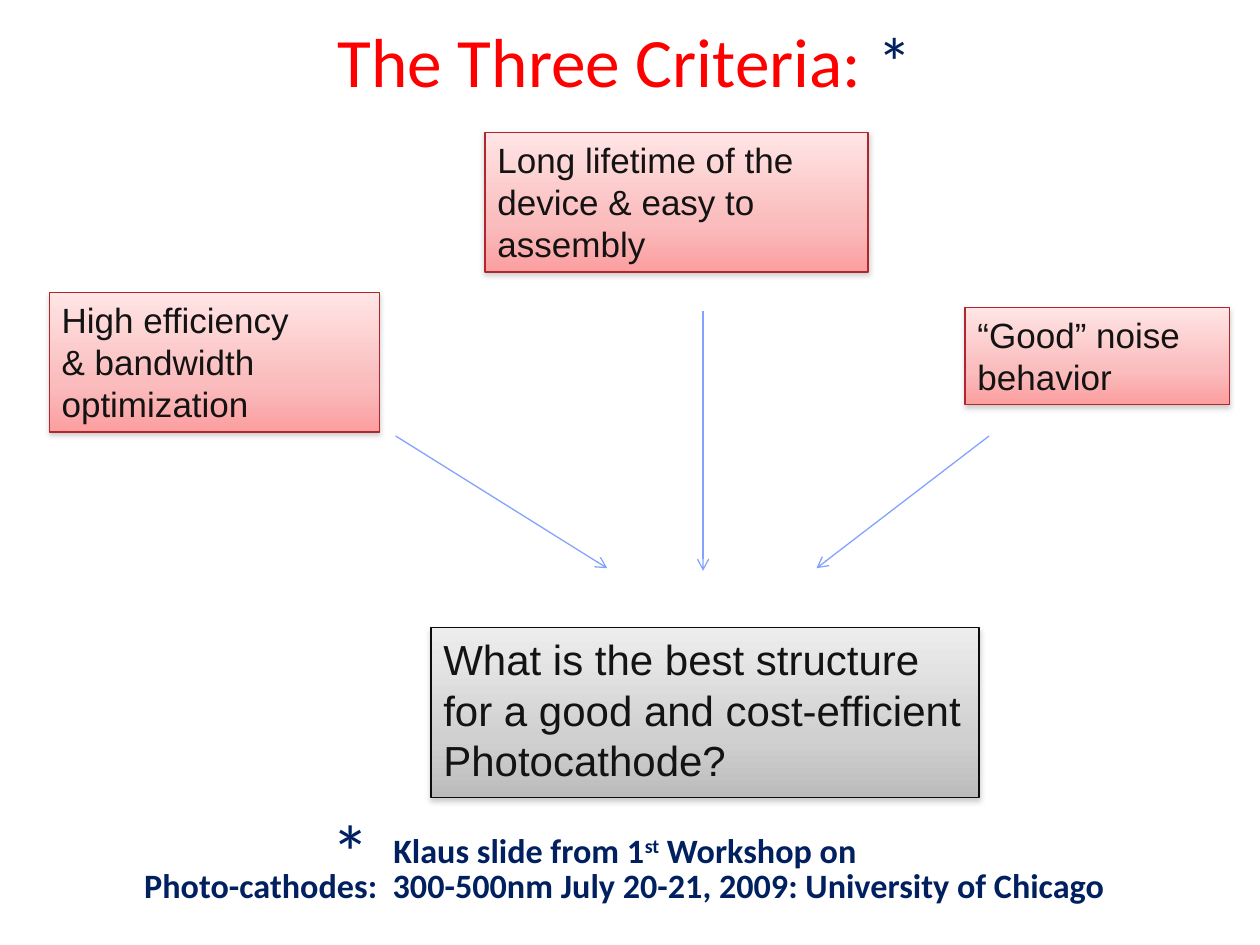
from typing import NamedTuple

from lxml import etree
from pptx import Presentation
from pptx.dml.color import RGBColor
from pptx.enum.shapes import MSO_CONNECTOR, MSO_SHAPE
from pptx.enum.text import MSO_ANCHOR, PP_ALIGN
from pptx.oxml import parse_xml
from pptx.oxml.ns import nsdecls, qn
from pptx.util import Inches, Pt

RECT = MSO_SHAPE.RECTANGLE
STRAIGHT = MSO_CONNECTOR.STRAIGHT
TOP, MIDDLE = MSO_ANCHOR.TOP, MSO_ANCHOR.MIDDLE
LEFT, CENTER = PP_ALIGN.LEFT, PP_ALIGN.CENTER

RED, NAVY, INK, ARROW_BLUE = "FF0000", "002060", "131313", "84A3FF"
STOPS = (0, 65, 100)


class Theme(NamedTuple):
    gradient: tuple[str, str, str]
    line: str


class Box(NamedTuple):
    left: float
    top: float
    width: float
    height: float
    text: str
    size: float
    theme: Theme


class Arrow(NamedTuple):
    x1: float
    y1: float
    x2: float
    y2: float


class Run(NamedTuple):
    text: str
    color: str = NAVY
    baseline: int = 0


PINK = Theme(("FFE5E5", "FBBCBD", "FB9FA0"), "AF262C")
GRAY = Theme(("EDEDED", "D0D0D0", "BCBCBC"), "0D0D0D")

BOXES = [
    Box(0.39, 2.32, 2.62, 1.11, "High efficiency\n& bandwidth optimization", 20, PINK),
    Box(3.85, 1.05, 3.04, 1.11, "Long lifetime of the device & easy to assembly", 20, PINK),
    Box(7.66, 2.44, 2.1, 0.77, "“Good” noise behavior", 20, PINK),
    Box(3.42, 4.98, 4.35, 1.35,
        "What is the best structure\nfor a good and cost-efficient\nPhotocathode?", 24, GRAY),
]
ARROWS = [
    Arrow(3.14, 3.46, 4.82, 4.51),
    Arrow(5.58, 2.47, 5.58, 4.53),
    Arrow(7.85, 3.46, 6.48, 4.51),
]


def rgb(color: str) -> RGBColor:
    return RGBColor.from_string(color)


def write(sp, runs: list[Run], size: float, font="Calibri", bold=False, align=LEFT,
          anchor=TOP, spacing=1.0, wrap=True, bottom=0.05) -> None:
    tf = sp.text_frame
    tf.word_wrap = wrap
    tf.vertical_anchor = anchor
    tf.margin_bottom = Inches(bottom)
    p = tf.paragraphs[0]
    p.alignment = align
    p.line_spacing = spacing
    for run in runs:
        for i, line in enumerate(run.text.split("\n")):
            if i:
                p.add_line_break()
            r = p.add_run()
            r.text = line
            r.font.name = font
            r.font.size = Pt(size)
            r.font.bold = bold
            r.font.color.rgb = rgb(run.color)
            if run.baseline:
                r.font._element.set("baseline", str(run.baseline * 1000))


def add_text(s, left: float, top: float, width: float, height: float,
             runs: list[Run], size: float, **fmt) -> None:
    sp = s.shapes.add_textbox(Inches(left), Inches(top), Inches(width), Inches(height))
    write(sp, runs, size, **fmt)


def add_box(s, box: Box) -> None:
    sp = s.shapes.add_shape(RECT, Inches(box.left), Inches(box.top),
                            Inches(box.width), Inches(box.height))
    sp.line.color.rgb = rgb(box.theme.line)
    sp.line.width = Pt(0.75)
    sp.shadow.inherit = False
    stops = "".join(f'<a:gs pos="{pos * 1000}"><a:srgbClr val="{color}"/></a:gs>'
                    for pos, color in zip(STOPS, box.theme.gradient))
    spPr = sp._element.spPr
    spPr.find(qn("a:prstGeom")).addnext(parse_xml(
        f'<a:gradFill {nsdecls("a")} rotWithShape="1"><a:gsLst>{stops}</a:gsLst>'
        '<a:lin ang="5400000" scaled="0"/></a:gradFill>'))
    spPr.find(qn("a:effectLst")).append(parse_xml(
        f'<a:outerShdw {nsdecls("a")} blurRad="{Pt(3.1)}" dist="{Pt(1.6)}" dir="5400000" '
        'rotWithShape="0"><a:srgbClr val="808080"><a:alpha val="38000"/></a:srgbClr>'
        '</a:outerShdw>'))
    write(sp, [Run(box.text, INK)], box.size, font="Arial")


def add_arrow(s, arrow: Arrow) -> None:
    cxn = s.shapes.add_connector(STRAIGHT, *(Inches(v) for v in arrow))
    cxn.line.color.rgb = rgb(ARROW_BLUE)
    cxn.line.width = Pt(0.75)
    spPr = cxn._element.spPr
    etree.SubElement(spPr.find(qn("a:ln")), qn("a:tailEnd"), type="arrow")
    etree.SubElement(spPr, qn("a:effectLst"))


def main() -> None:
    prs = Presentation()
    prs.slide_width, prs.slide_height = Inches(10), Inches(7.5)
    s = prs.slides.add_slide(prs.slide_layouts[6])

    add_text(s, 0.61, 0.28, 8.7, 0.39, [Run("The Three Criteria: ", RED), Run("*")],
             39.6, align=CENTER, anchor=MIDDLE)
    for box in BOXES:
        add_box(s, box)
    for arrow in ARROWS:
        add_arrow(s, arrow)
    credit = [
        Run("Klaus slide from 1"),
        Run("st", baseline=30),
        Run(" Workshop on\nPhoto-cathodes:  300-500nm July 20-21, 2009: University of Chicago"),
    ]
    add_text(s, 0, 6.6, 9.92, 0.9, credit, 19.5, bold=True, align=CENTER,
             anchor=MIDDLE, spacing=0.85, bottom=0.33)
    add_text(s, 2.53, 6.33, 0.51, 0.84, [Run("*")], 44, wrap=False)

    prs.save("out.pptx")


if __name__ == "__main__":
    main()
